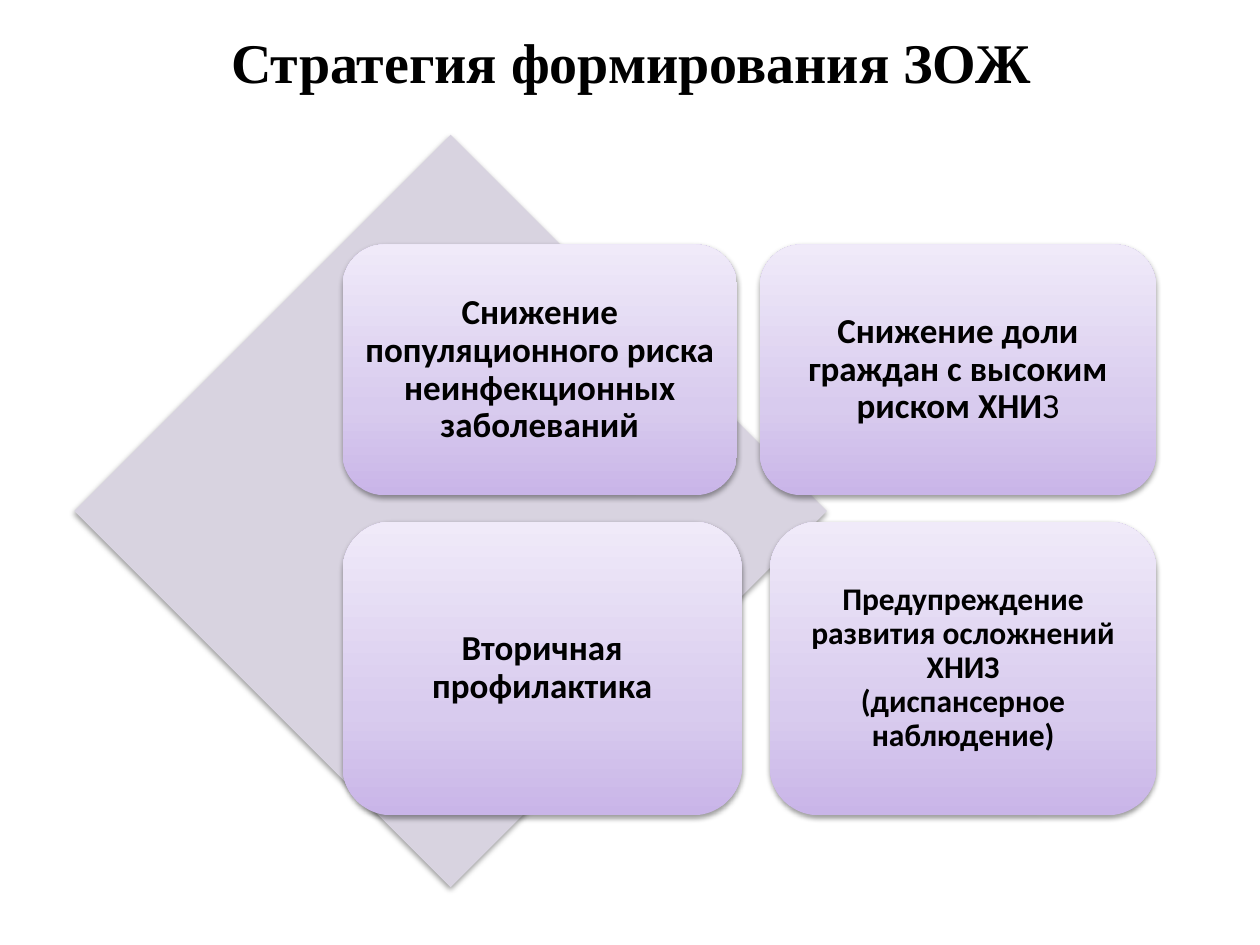
import copy
from dataclasses import dataclass

import pptx
import pptx.dml.color
import pptx.enum.shapes
import pptx.enum.text
import pptx.oxml
import pptx.oxml.ns
import pptx.util

Pt = pptx.util.Pt
RGBColor = pptx.dml.color.RGBColor
qn = pptx.oxml.ns.qn
MSO_SHAPE = pptx.enum.shapes.MSO_SHAPE
CENTER = pptx.enum.text.PP_ALIGN.CENTER
MIDDLE = pptx.enum.text.MSO_ANCHOR.MIDDLE


@dataclass(frozen=True)
class Theme:
    text: str = "000000"
    diamond: str = "D8D3E0"
    card_stops: tuple = ((0, "C9B5E8"), (0.35, "D8CBEE"), (1, "F0EAF9"))
    title_font: str = "Times New Roman"
    body_font: str = "Calibri"
    title_size: int = 32
    body_size: int = 20
    small_size: int = 18


theme = Theme()


def add_soft_shadow(shape):
    shape.shadow.inherit = False
    effects = shape._element.spPr.find(qn("a:effectLst"))
    effects.append(pptx.oxml.parse_xml(
        '<a:outerShdw xmlns:a="http://schemas.openxmlformats.org/drawingml/2006/main"'
        f' blurRad="{Pt(3.1)}" dist="{Pt(1.6)}" dir="5400000" rotWithShape="0">'
        '<a:srgbClr val="000000"><a:alpha val="38000"/></a:srgbClr></a:outerShdw>'))


def format_text(text_frame, font, size):
    text_frame.word_wrap = True
    text_frame.vertical_anchor = MIDDLE
    for paragraph in text_frame.paragraphs:
        paragraph.alignment = CENTER
        for run in paragraph.runs:
            run.font.name = font
            run.font.size = Pt(size)
            run.font.bold = True
            run.font.color.rgb = RGBColor.from_string(theme.text)


presentation = pptx.Presentation()
presentation.slide_width, presentation.slide_height = Pt(720), Pt(540)
slide = presentation.slides.add_slide(presentation.slide_layouts[6])

# Title
title = slide.shapes.add_textbox(Pt(36.7), Pt(9.4), Pt(648), Pt(51))
title.text_frame.text = "Стратегия формирования ЗОЖ"
format_text(title.text_frame, theme.title_font, theme.title_size)

# Diamond behind the cards
diamond = slide.shapes.add_shape(MSO_SHAPE.DIAMOND, Pt(42.5), Pt(77), Pt(430), Pt(430))
diamond.fill.solid()
diamond.fill.fore_color.rgb = RGBColor.from_string(theme.diamond)
diamond.line.fill.background()
add_soft_shadow(diamond)

# Cards: left, top, width, height, text size, paragraphs made of runs
top_row, bottom_row = (139.7, 143.3), (298.1, 167.8)
cards = [
    (195.8, top_row, 225.4, theme.body_size,
     [["Снижение популяционного риска неинфекционных заболеваний"]]),
    (434.2, top_row, 226.4, theme.body_size,
     [["Снижение доли граждан с высоким риском ХНИ", "З"]]),
    (195.8, bottom_row, 228.2, theme.body_size,
     [["Вторичная профилактика"]]),
    (439.9, bottom_row, 221, theme.small_size,
     [["Предупреждение развития осложнений ХНИЗ"], ["(диспансерное наблюдение)"]]),
]
for left, (top, height), width, size, paragraphs in cards:
    card = slide.shapes.add_shape(
        MSO_SHAPE.ROUNDED_RECTANGLE, Pt(left), Pt(top), Pt(width), Pt(height))

    # Vertical three-stop gradient, darkest at the bottom
    card.fill.gradient()
    card.fill.gradient_angle = 90
    stop_list = card._element.spPr.find(qn("a:gradFill")).find(qn("a:gsLst"))
    stop_list.append(copy.deepcopy(stop_list[0]))
    for stop, (position, color) in zip(card.fill.gradient_stops, theme.card_stops):
        stop.position = position
        stop.color.rgb = RGBColor.from_string(color)
    card.line.fill.background()
    add_soft_shadow(card)

    # Text
    text_frame = card.text_frame
    inset = Pt(size * 0.29)
    text_frame.margin_left = text_frame.margin_right = inset
    text_frame.margin_top = text_frame.margin_bottom = inset
    for index, runs in enumerate(paragraphs):
        paragraph = text_frame.paragraphs[0] if index == 0 else text_frame.add_paragraph()
        paragraph.line_spacing = 0.9
        for text in runs:
            paragraph.add_run().text = text
    format_text(text_frame, theme.body_font, size)
    for run in text_frame.paragraphs[0].runs[1:]:
        run.font.bold = False

presentation.save("out.pptx")
